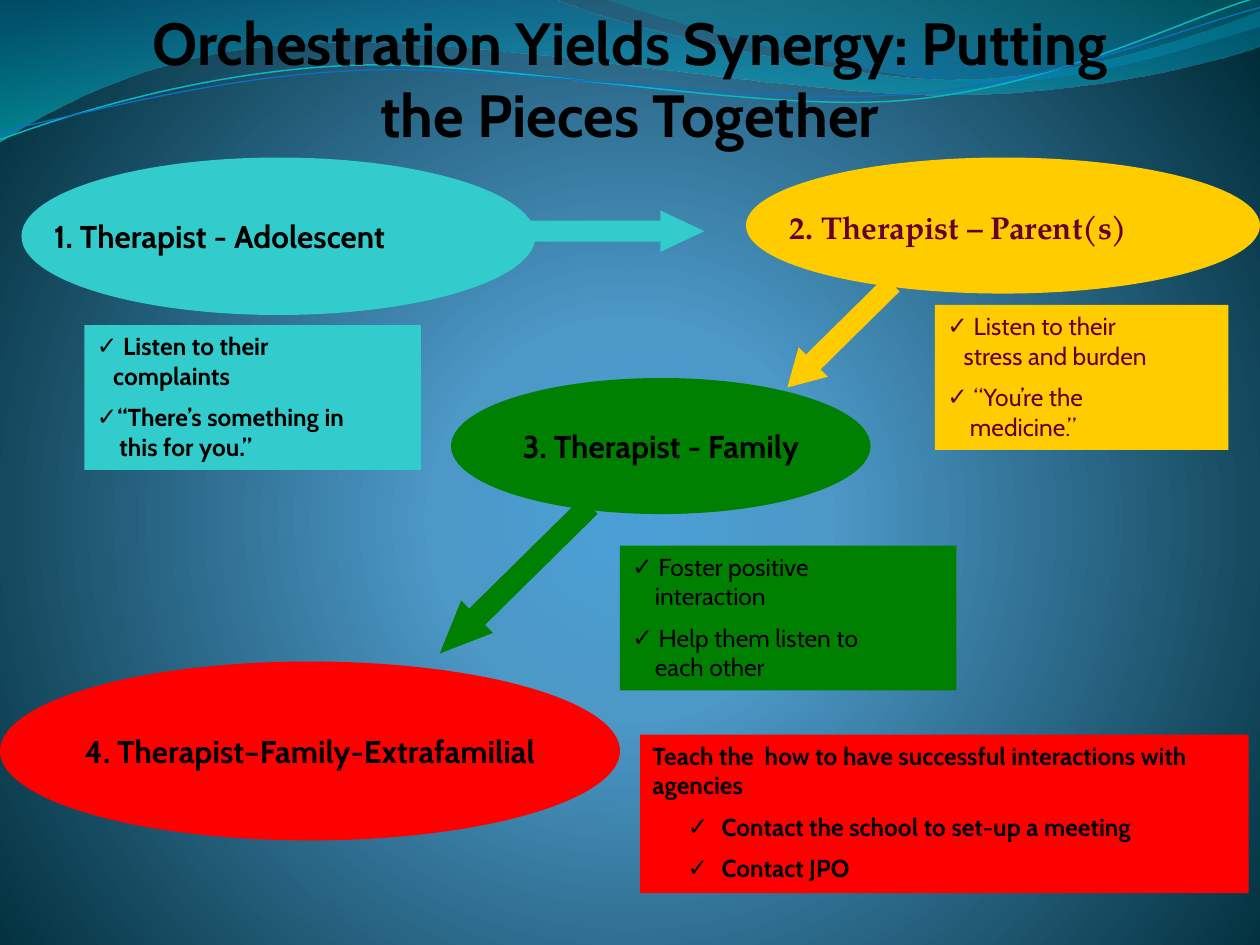
from lxml import etree
from pptx import Presentation
from pptx.dml.color import RGBColor
from pptx.enum import shapes as kinds, text as t
from pptx.oxml import ns
from pptx.util import Inches, Pt

# Content
TITLE = "Orchestration Yields Synergy: Putting the Pieces Together"
FONT, SERIF = "Cabin", "TeX Gyre Pagella"
TEAL, GOLD, GREEN, RED = "33CCCC", "FFCC00", "008000", "FF0000"
BLACK, PLUM = "000000", "660033"
TICK, WIDE, NARROW, SUB = (0.21, -0.21), (0.18, 0), (0.13, 0), (0.55, -0.27)

# Arrows: (left, top, width, height), rotation, head length, colour
ARROWS = [
    ((6.08, 2.5, 1.17, 0.33), 135.4, 0.875, GOLD),
    ((3.25, 4.42, 1.67, 0.36), 135.4, 1.154, GREEN),
    ((4.17, 1.67, 1.42, 0.33), 0, 1.06, TEAL),
]

# Stages: ellipse, colour, label, label box (None: inside the ellipse), format
STAGES = [
    ((0, 5.25, 4.92, 1.42), RED, "4. Therapist–Family-Extrafamilial", None, {}),
    ((0.17, 1.25, 4.08, 1.25), TEAL, "1. Therapist - Adolescent", (0.33, 1.67, 3.75, 0.4), {}),
    ((3.58, 3, 3.33, 1.08), GREEN, "3. Therapist - Family", None, {}),
    ((5.92, 1.25, 4.08, 1.08), GOLD, "2. Therapist – Parent(s)", (6.17, 1.6, 3.83, 0.4),
     dict(font=SERIF, color=PLUM)),
]

# Notes: box, colour, format, lines of (text, indent, ticked, space before)
NOTES = [
    ((0.67, 2.58, 2.67, 1.15), TEAL, {}, [
        ("Listen to their", TICK, True, 0), ("complaints", NARROW, False, 0),
        ("“There’s something in", (0.16, -0.16), True, 7), ("this for you.”", WIDE, False, 0)]),
    ((7.42, 2.42, 2.33, 1.15), GOLD, dict(color=PLUM, bold=False), [
        ("Listen to their", TICK, True, 0), ("stress and burden", NARROW, False, 0),
        ("“You’re the", TICK, True, 7), ("medicine.”", WIDE, False, 0)]),
    ((4.92, 4.33, 2.67, 1.15), GREEN, dict(bold=False), [
        ("Foster positive", TICK, True, 0), ("interaction", WIDE, False, 0),
        ("Help them listen to", TICK, True, 7), ("each other", WIDE, False, 0)]),
    ((5.08, 5.83, 4.83, 1.26), RED, {}, [
        ("Teach the  how to have successful interactions with agencies", (0, 0), False, 0),
        ("Contact the school to set-up a meeting", SUB, True, 7),
        ("Contact JPO", SUB, True, 7)]),
]

# Waves: start point, then segments of one point (line) or three points (curve)
BANDS = [
    ((0, 0), [[(4.4, -0.01)], [(4.76, 0.17), (6.64, 0.63), (7.58, 0.63)],
              [(8.53, 0.63), (9.58, 0.26), (10, 0.09)], [(10.01, 0.36)],
              [(9.83, 0.44), (8.7, 0.76), (7.46, 0.75)], [(6.22, 0.75), (3.82, 0.28), (2.57, 0.34)],
              [(1.29, 0.36), (0.46, 0.83), (-0.01, 1.13)]],
     [(0, "0074A1", 45), (100, "00C6CF", 55)]),
    ((4.79, -0.01), [[(5.09, 0.11), (6.82, 0.62), (7.69, 0.65)],
                     [(8.56, 0.69), (9.61, 0.32), (10, 0.21)], [(10, 0)]],
     [(0, "00A1A9", 30), (80, "008BBF", 45)]),
]
STRANDS = [
    ((0, 1.11), [[(0.48, 0.93), (1.58, 0.57), (2.77, 0.52)], [(3.95, 0.47), (5.93, 0.89), (7.13, 0.8)],
                 [(8.33, 0.71), (9.38, 0.15), (9.98, -0.02)]], "0AB8BF", 0.85),
    ((0, 1.04), [[(0.47, 0.96), (1.64, 0.61), (2.83, 0.56)], [(4.03, 0.51), (5.97, 0.84), (7.17, 0.75)],
                 [(8.36, 0.67), (9.41, 0.21), (10, 0.06)]], "0F6FC6", 0.75),
]
BACKDROP = [(0, "4AA0D6", 100), (25, "4C98C7", 100), (100, "002C38", 100)]


def rgb(value):
    return RGBColor.from_string(value)


def set_gradient(fill, parent, stops, direction):
    """Give parent a gradient with (position, colour, opacity) stops."""
    fill.gradient()
    old = parent.find(ns.qn("a:gradFill"))
    stop_xml = "".join(
        f'<a:gs pos="{pos * 1000}"><a:srgbClr val="{color}"><a:alpha val="{alpha * 1000}"/>'
        "</a:srgbClr></a:gs>" for pos, color, alpha in stops)
    parent.replace(old, etree.fromstring(
        f'<a:gradFill {ns.nsdecls("a")} rotWithShape="1"><a:gsLst>{stop_xml}</a:gsLst>'
        f"{direction}</a:gradFill>"))


def add_wave(slide, start, segments, closed):
    """Draw an outline in hundredths of an inch, then join point triples into curves."""
    start, *points = [(round(x * 100), round(y * 100))
                      for x, y in [start, *(point for segment in segments for point in segment)]]
    builder = slide.shapes.build_freeform(*start, scale=Inches(0.01))
    builder.add_line_segments(points, close=closed)
    wave = builder.convert_to_shape()
    wave.shadow.inherit = False
    steps = iter(list(wave._element.spPr.iter(ns.qn("a:lnTo"))))
    for segment in segments:
        parts = [next(steps) for _ in segment]
        if len(parts) == 3:
            curve = etree.Element(ns.qn("a:cubicBezTo"))
            parts[0].addprevious(curve)
            for part in parts:
                curve.append(part[0])
                part.getparent().remove(part)
    return wave


def add_block(slide, kind, box, color):
    block = slide.shapes.add_shape(kind, *map(Inches, box))
    block.shadow.inherit = False
    block.fill.solid()
    block.fill.fore_color.rgb = rgb(color)
    block.line.fill.background()
    return block


def write(frame, lines, size=18, font=FONT, color=BLACK, bold=True,
          align=t.PP_ALIGN.LEFT, anchor=t.MSO_ANCHOR.TOP, wrap=True):
    """Fill a text frame with (text, indent, ticked, space before) lines."""
    frame.word_wrap, frame.vertical_anchor = wrap, anchor
    frame.auto_size = t.MSO_AUTO_SIZE.NONE
    for i, (words, (margin, indent), ticked, before) in enumerate(lines):
        line = frame.add_paragraph() if i else frame.paragraphs[0]
        line.alignment, line.space_before, line.line_spacing = align, Pt(before), 1.0
        props = line._p.get_or_add_pPr()
        props.set("marL", str(Inches(margin)))
        props.set("indent", str(Inches(indent)))
        if ticked:
            etree.SubElement(props, ns.qn("a:buFont"), typeface=font)
            etree.SubElement(props, ns.qn("a:buChar"), char="✓")
        run = line.add_run()
        run.text = words
        run.font.size, run.font.name, run.font.bold = Pt(size), font, bold
        run.font.color.rgb = rgb(color)


def main():
    prs = Presentation()
    prs.slide_width, prs.slide_height = Inches(10), Inches(7.5)
    slide = prs.slides.add_slide(prs.slide_layouts[5])

    # Backdrop and waves
    backdrop = slide.background.fill
    backdrop.solid()
    set_gradient(backdrop, slide._element.cSld.find(".//" + ns.qn("p:bgPr")), BACKDROP,
                 '<a:path path="circle"><a:fillToRect l="10000" t="110000" r="10000" b="100000"/></a:path>')
    for start, segments, stops in BANDS:
        band = add_wave(slide, start, segments, True)
        band.line.fill.background()
        set_gradient(band.fill, band._element.spPr, stops, '<a:lin ang="5400000" scaled="1"/>')
    for start, segments, color, width in STRANDS:
        strand = add_wave(slide, start, segments, False)
        strand.fill.background()
        strand.line.color.rgb, strand.line.width = rgb(color), Pt(width)

    # Title, in front of the waves
    title = slide.shapes.title
    title.left, title.top, title.width, title.height = map(Inches, (1, 0, 8, 1.23))
    write(title.text_frame, [(TITLE, (0, 0), False, 0)], size=34, align=t.PP_ALIGN.CENTER)
    slide.shapes._spTree.append(title._element)

    # Arrows
    for box, rotation, head, color in ARROWS:
        arrow = add_block(slide, kinds.MSO_SHAPE.RIGHT_ARROW, box, color)
        arrow.rotation = rotation
        arrow.adjustments[0], arrow.adjustments[1] = 0.5, head

    # Stages with their labels
    for box, color, label, label_box, style in STAGES:
        stage = add_block(slide, kinds.MSO_SHAPE.OVAL, box, color)
        lines = [(label, (0, 0), False, 0)]
        if label_box:
            plate = add_block(slide, kinds.MSO_SHAPE.RECTANGLE, label_box, color)
            if color == GOLD:
                plate.fill.background()
            write(plate.text_frame, lines, **style)
        else:
            write(stage.text_frame, lines, align=t.PP_ALIGN.CENTER,
                  anchor=t.MSO_ANCHOR.MIDDLE, wrap=False, **style)

    # Notes
    for box, color, style, lines in NOTES:
        note = add_block(slide, kinds.MSO_SHAPE.RECTANGLE, box, color)
        write(note.text_frame, lines, size=14, **style)

    prs.save("out.pptx")


if __name__ == "__main__":
    main()
